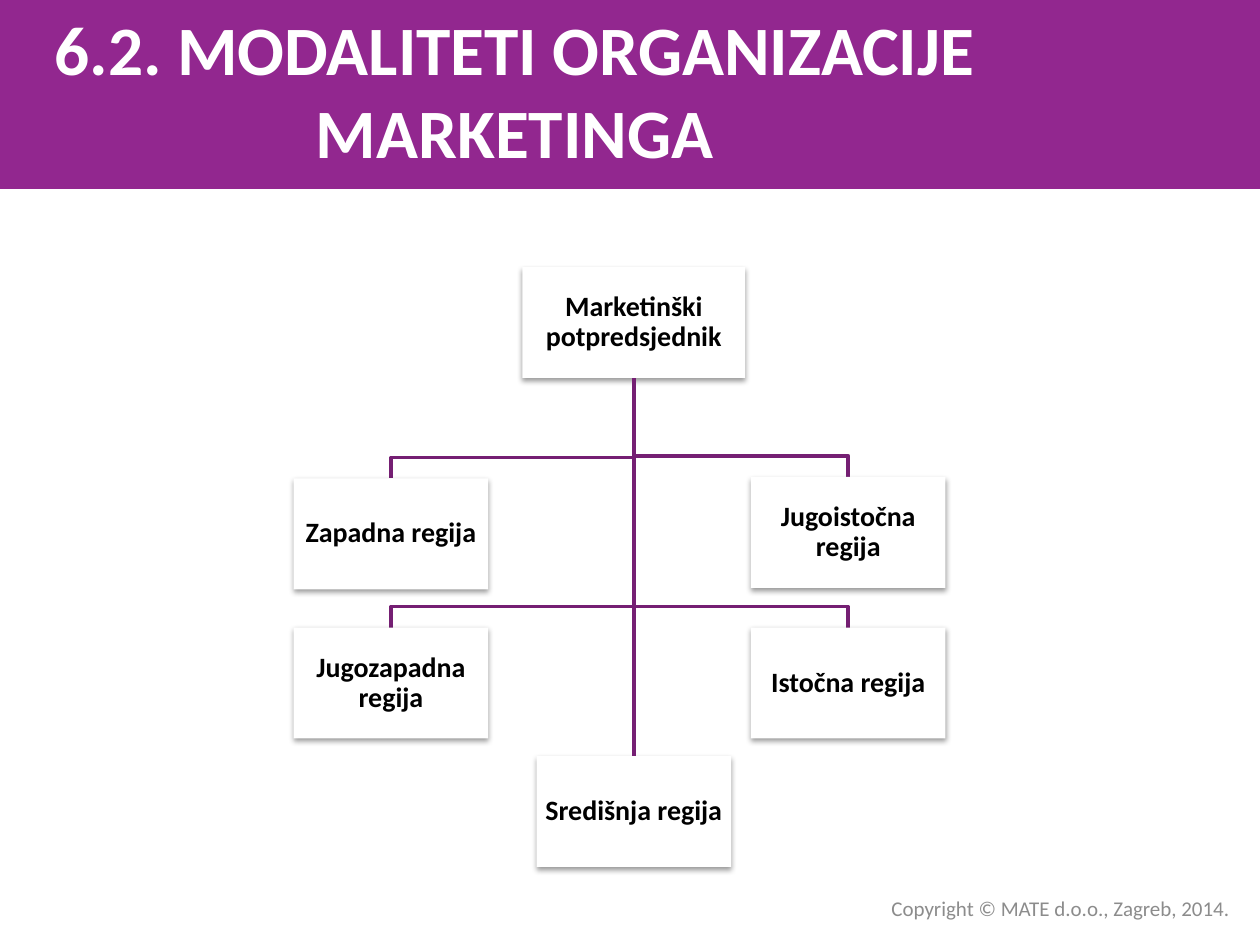
import pptx
import pptx.util
import pptx.dml.color
import pptx.enum.shapes
import pptx.enum.text
import pptx.oxml
import pptx.oxml.ns

Pt = pptx.util.Pt
RGBColor = pptx.dml.color.RGBColor
PP_ALIGN = pptx.enum.text.PP_ALIGN

PURPLE = RGBColor(0x92, 0x27, 0x8F)
DARK_PURPLE = RGBColor(0x75, 0x1F, 0x73)
WHITE = RGBColor(0xFF, 0xFF, 0xFF)
BLACK = RGBColor(0x00, 0x00, 0x00)
GREY = RGBColor(0x8C, 0x8C, 0x8C)

BOX_HEIGHT = 63.4
ROOT_WIDTH = 127.4
REGION_WIDTH = 111.2
CENTER = 362.2
ROOT_TOP = 152.6
LEFT_CENTER = 223.4
RIGHT_CENTER = 484.7
BRANCH_DROP = 12
LINE_WIDTH = 2

SIDE_REGIONS = [
    ("Zapadna regija", LEFT_CENTER, 273.4),
    ("Jugozapadna regija", LEFT_CENTER, 358.6),
    ("Jugoistočna regija", RIGHT_CENTER, 272.5),
    ("Istočna regija", RIGHT_CENTER, 358.6),
]

NAMESPACE = pptx.oxml.ns.nsdecls("a")
NO_EFFECTS = f"<a:effectLst {NAMESPACE}/>"
SHADOW = (
    f'<a:outerShdw {NAMESPACE} blurRad="40000" dist="20000" '
    'dir="5400000" rotWithShape="0"><a:srgbClr val="000000">'
    '<a:alpha val="38000"/></a:srgbClr></a:outerShdw>'
)


def set_text(text_frame, text, size, color, alignment, bold=False):
    text_frame.text = text
    text_frame.word_wrap = True
    text_frame.auto_size = pptx.enum.text.MSO_AUTO_SIZE.NONE
    text_frame.vertical_anchor = pptx.enum.text.MSO_ANCHOR.MIDDLE
    paragraph = text_frame.paragraphs[0]
    paragraph.alignment = alignment
    font = paragraph.runs[0].font
    font.name = "Calibri"
    font.size = Pt(size)
    font.bold = bold
    font.color.rgb = color
    return paragraph


def add_rectangle(slide, left, top, width, height, color):
    shape = slide.shapes.add_shape(
        pptx.enum.shapes.MSO_SHAPE.RECTANGLE, Pt(left), Pt(top), Pt(width), Pt(height))
    shape.shadow.inherit = False
    shape.fill.solid()
    shape.fill.fore_color.rgb = color
    shape.line.fill.background()
    return shape


def add_title(slide):
    title = slide.shapes.title
    title.left, title.top, title.width, title.height = Pt(0), Pt(5.8), Pt(588.2), Pt(90)
    set_text(title.text_frame, "6.2. MODALITETI ORGANIZACIJE MARKETINGA",
             39.6, WHITE, PP_ALIGN.CENTER, bold=True)
    band = add_rectangle(slide, 0, 0, 720, 108, PURPLE)
    title.element.addprevious(band.element)


def add_box(slide, text, center, top, width):
    box = add_rectangle(slide, center - width / 2, top, width, BOX_HEIGHT, WHITE)
    effects = box.element.spPr.find(pptx.oxml.ns.qn("a:effectLst"))
    effects.append(pptx.oxml.parse_xml(SHADOW))
    text_frame = box.text_frame
    text_frame.margin_left = text_frame.margin_right = Pt(0.8)
    text_frame.margin_top = text_frame.margin_bottom = Pt(0.8)
    paragraph = set_text(text_frame, text, 16, BLACK, PP_ALIGN.CENTER, bold=True)
    paragraph.line_spacing = 0.9
    return box


def style_line(line):
    line.color.rgb = DARK_PURPLE
    line.width = Pt(LINE_WIDTH)


def add_branch(slide, center, top):
    bend = top - BRANCH_DROP
    builder = slide.shapes.build_freeform(Pt(CENTER), Pt(ROOT_TOP + BOX_HEIGHT))
    corners = [(CENTER, bend), (center, bend), (center, top)]
    builder.add_line_segments([(Pt(x), Pt(y)) for x, y in corners], close=False)
    branch = builder.convert_to_shape()
    branch.shadow.inherit = False
    branch.fill.background()
    style_line(branch.line)


def add_trunk(slide, upper_box, lower_box):
    trunk = slide.shapes.add_connector(
        pptx.enum.shapes.MSO_CONNECTOR.STRAIGHT, Pt(0), Pt(0), Pt(0), Pt(0))
    trunk.begin_connect(upper_box, 2)
    trunk.end_connect(lower_box, 0)
    style_line(trunk.line)
    trunk.element.spPr.append(pptx.oxml.parse_xml(NO_EFFECTS))


def add_organization_chart(slide):
    for text, center, top in SIDE_REGIONS:
        add_branch(slide, center, top)
    root = add_box(slide, "Marketinški potpredsjednik", CENTER, ROOT_TOP, ROOT_WIDTH)
    for text, center, top in SIDE_REGIONS:
        add_box(slide, text, center, top, REGION_WIDTH)
    central = add_box(slide, "Središnja regija", CENTER, 432, REGION_WIDTH)
    add_trunk(slide, root, central)


def add_copyright(slide):
    box = slide.shapes.add_textbox(Pt(337.7), Pt(508.3), Pt(372.2), Pt(21.6))
    set_text(box.text_frame, "Copyright © MATE d.o.o., Zagreb, 2014.",
             12, GREY, PP_ALIGN.RIGHT)


def main():
    presentation = pptx.Presentation()
    presentation.slide_width = Pt(720)
    presentation.slide_height = Pt(540)
    slide = presentation.slides.add_slide(presentation.slide_layouts[5])
    add_title(slide)
    add_organization_chart(slide)
    add_copyright(slide)
    presentation.save("out.pptx")


if __name__ == "__main__":
    main()
